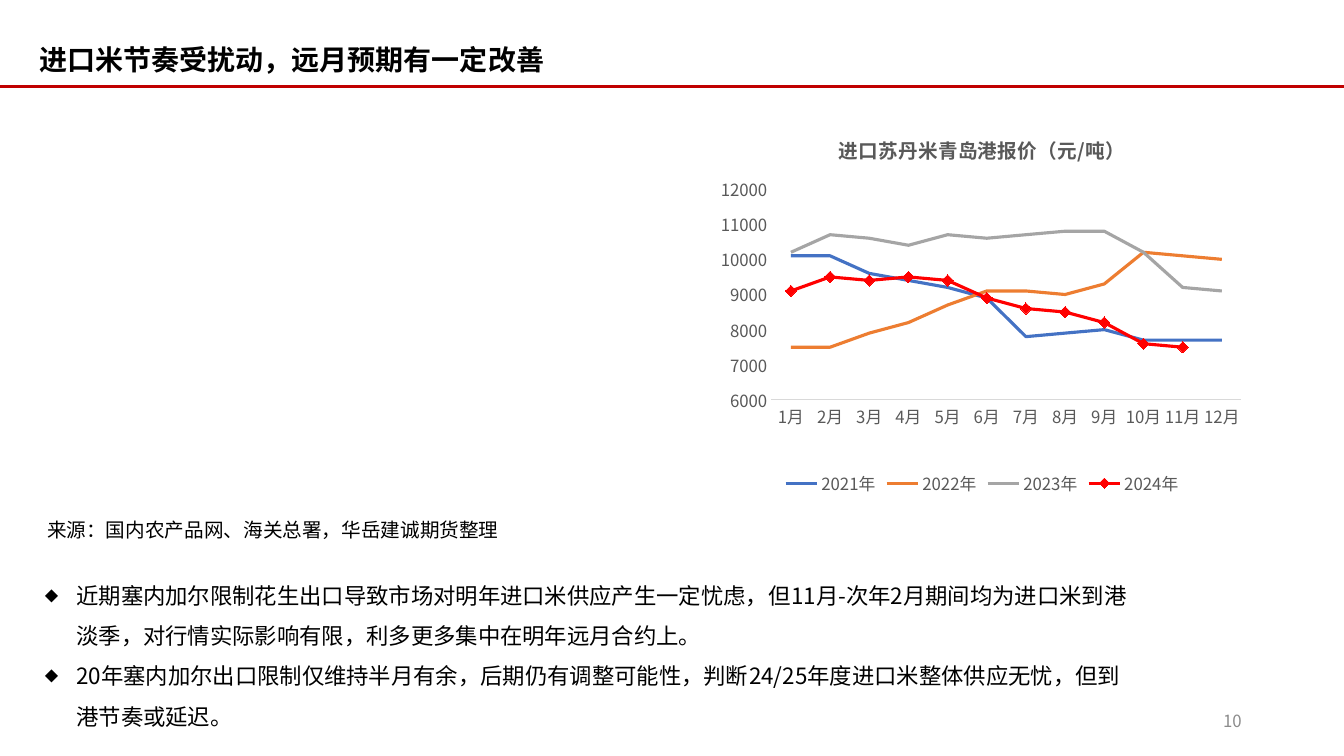
"""Build the slide on imported peanut prices and the outlook for later months."""
from lxml import etree
from pptx import Presentation
from pptx.chart.data import CategoryChartData
from pptx.dml.color import RGBColor
from pptx.enum.chart import XL_CHART_TYPE, XL_LEGEND_POSITION, XL_MARKER_STYLE, XL_TICK_MARK
from pptx.enum.shapes import MSO_CONNECTOR
from pptx.enum.text import MSO_ANCHOR, PP_ALIGN
from pptx.oxml import parse_xml
from pptx.oxml.ns import nsdecls, qn
from pptx.util import Pt

LEFT, RIGHT, JUSTIFY = PP_ALIGN.LEFT, PP_ALIGN.RIGHT, PP_ALIGN.JUSTIFY
TOP, MIDDLE = MSO_ANCHOR.TOP, MSO_ANCHOR.MIDDLE
NO_TICK = XL_TICK_MARK.NONE
FONT = "Noto Sans CJK SC"
COLORS = {
    "text": "000000", "rule": "C00000", "page": "8C8C8C", "chart_text": "595959",
    "axis": "D9D9D9", "white": "FFFFFF", "2021年": "4472C4", "2022年": "ED7D31",
    "2023年": "A5A5A5", "2024年": "FF0000",
}


def style_font(font, size, color, bold=False):
    font.size = Pt(size)
    font.bold = bold
    font.color.rgb = RGBColor.from_string(COLORS[color])
    font.name = FONT


def add_text(paragraphs, left, top, width, height, size=14, color="text", bold=False,
             align=LEFT, anchor=TOP, spacing=1.0, indent=0, bullet=None):
    shape = slide.shapes.add_textbox(Pt(left), Pt(top), Pt(width), Pt(height))
    frame = shape.text_frame
    frame.word_wrap = True
    frame.vertical_anchor = anchor
    for index, text in enumerate(paragraphs):
        paragraph = frame.paragraphs[0] if index == 0 else frame.add_paragraph()
        paragraph.alignment = align
        paragraph.line_spacing = spacing
        properties = paragraph._p.get_or_add_pPr()
        if indent:
            properties.set("marL", str(Pt(indent)))
            properties.set("indent", str(Pt(-indent)))
        if bullet:
            etree.SubElement(properties, qn("a:buSzPct"), val="60000")
            etree.SubElement(properties, qn("a:buFont"), typeface=FONT)
            etree.SubElement(properties, qn("a:buChar"), char=bullet)
        run = paragraph.add_run()
        run.text = text
        style_font(run.font, size, color, bold)


presentation = Presentation()
presentation.slide_width = Pt(960)
presentation.slide_height = Pt(540)
slide = presentation.slides.add_slide(presentation.slide_layouts[6])

add_text(["进口米节奏受扰动，远月预期有一定改善"], 21, 15, 675, 38,
         size=20, bold=True, align=JUSTIFY, spacing=1.5, indent=27)

rule = slide.shapes.add_connector(MSO_CONNECTOR.STRAIGHT, Pt(0), Pt(62), Pt(960), Pt(62))
rule.line.color.rgb = RGBColor.from_string(COLORS["rule"])
rule.line.width = Pt(2.25)
etree.SubElement(rule._element.spPr, qn("a:effectLst"))

add_text(["10"], 678, 500.5, 216, 29, size=12, color="page", align=RIGHT, anchor=MIDDLE)
add_text(["近期塞内加尔限制花生出口导致市场对明年进口米供应产生一定忧虑，但11月-次年2月期间均为进口米到港淡季，"
          "对行情实际影响有限，利多更多集中在明年远月合约上。",
          "20年塞内加尔出口限制仅维持半月有余，后期仍有调整可能性，判断24/25年度进口米整体供应无忧，但到港节奏或延迟。"],
         25, 402.5, 795, 119, size=16, spacing=1.5, indent=22.5, bullet="◆")
add_text(["来源：国内农产品网、海关总署，华岳建诚期货整理"], 26.5, 366.5, 409, 24.5)

prices = {
    "2021年": [10100, 10100, 9600, 9400, 9200, 8900, 7800, 7900, 8000, 7700, 7700, 7700],
    "2022年": [7500, 7500, 7900, 8200, 8700, 9100, 9100, 9000, 9300, 10200, 10100, 10000],
    "2023年": [10200, 10700, 10600, 10400, 10700, 10600, 10700, 10800, 10800, 10200, 9200, 9100],
    "2024年": [9100, 9500, 9400, 9500, 9400, 8900, 8600, 8500, 8200, 7600, 7500, None],
}
chart_data = CategoryChartData()
chart_data.categories = [f"{month}月" for month in range(1, 13)]
for year, values in prices.items():
    chart_data.add_series(year, values)
chart = slide.shapes.add_chart(XL_CHART_TYPE.LINE_MARKERS, Pt(508.5), Pt(83), Pt(386), Pt(274),
                               chart_data).chart
style_font(chart.font, 12, "text")

chart.has_title = True
title_run = chart.chart_title.text_frame.paragraphs[0].add_run()
title_run.text = "进口苏丹米青岛港报价（元/吨）"
style_font(title_run.font, 14, "chart_text", bold=True)
chart.chart_title.include_in_layout = False

chart.has_legend = True
chart.legend.position = XL_LEGEND_POSITION.BOTTOM
chart.legend.include_in_layout = False
style_font(chart.legend.font, 12, "chart_text")

for axis in (chart.category_axis, chart.value_axis):
    axis.major_tick_mark = axis.minor_tick_mark = NO_TICK
    axis.has_major_gridlines = False
    style_font(axis.tick_labels.font, 12, "chart_text")
chart.category_axis.format.line.color.rgb = RGBColor.from_string(COLORS["axis"])
chart.category_axis.format.line.width = Pt(0.75)
chart.value_axis.format.line.fill.background()
chart.value_axis.minimum_scale = 6000
chart.value_axis.maximum_scale = 12000
chart.value_axis.major_unit = 1000

chart.plots[0].vary_by_categories = False
for series in chart.plots[0].series:
    color = RGBColor.from_string(COLORS[series.name])
    series.smooth = False
    series.format.line.color.rgb = color
    series.format.line.width = Pt(2.25)
    series.marker.style = XL_MARKER_STYLE.NONE
    if series.name == "2024年":
        series.marker.style = XL_MARKER_STYLE.DIAMOND
        series.marker.size = 8
        series.marker.format.fill.solid()
        series.marker.format.fill.fore_color.rgb = color
        series.marker.format.line.color.rgb = color

chart_space = chart.element
plot_area = chart_space.find(".//" + qn("c:plotArea"))
for layout in plot_area.findall(qn("c:layout")):
    plot_area.remove(layout)
plot_area.insert(0, parse_xml(
    f'<c:layout {nsdecls("c")}><c:manualLayout><c:layoutTarget val="inner"/>'
    '<c:xMode val="edge"/><c:yMode val="edge"/><c:x val="0.11"/><c:y val="0.19"/>'
    '<c:w val="0.87"/><c:h val="0.55"/></c:manualLayout></c:layout>'))
chart_space.find(qn("c:txPr")).addprevious(parse_xml(
    f'<c:spPr {nsdecls("c", "a")}><a:solidFill><a:srgbClr val="{COLORS["white"]}"/>'
    '</a:solidFill><a:ln><a:noFill/></a:ln></c:spPr>'))

for root in (slide.element, chart_space):
    for latin in list(root.iter(qn("a:latin"))):
        latin.addnext(parse_xml(f'<a:ea {nsdecls("a")} typeface="{FONT}"/>'))

presentation.save("out.pptx")
